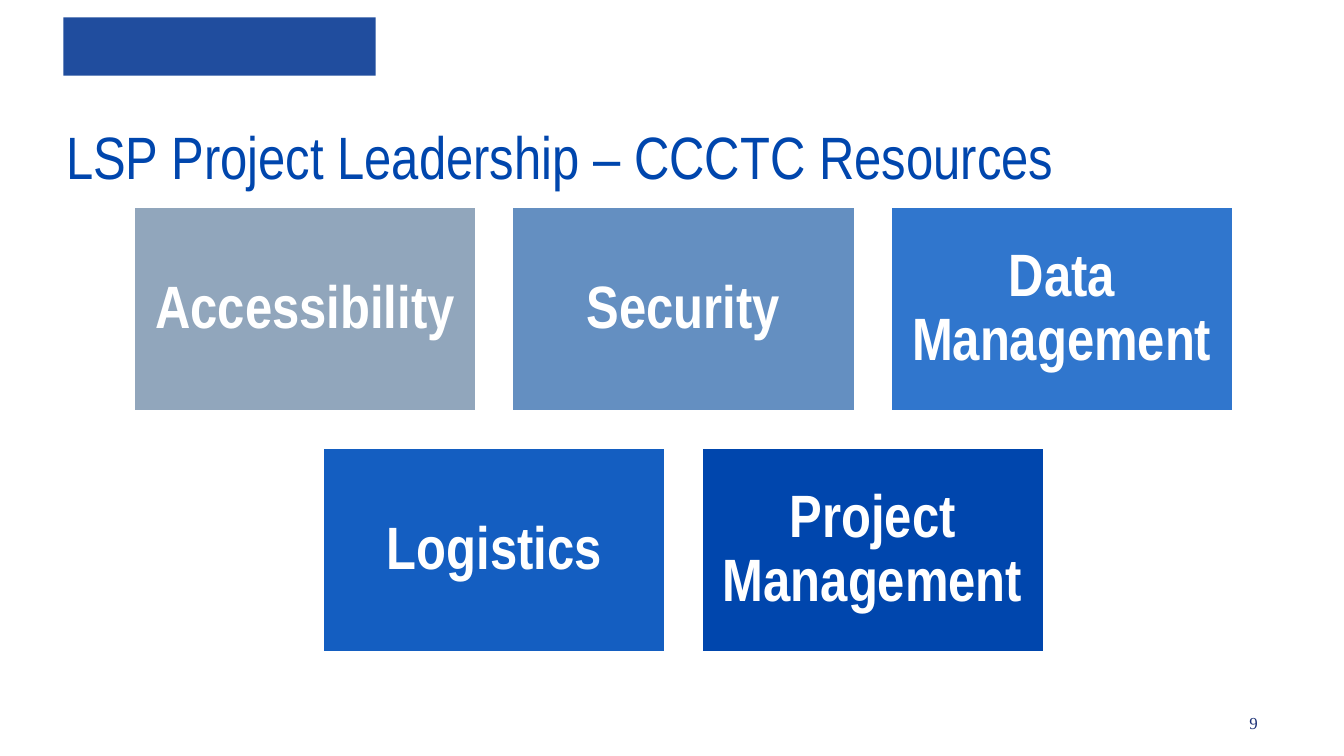
from pptx import Presentation
from pptx.dml.color import RGBColor
from pptx.enum.shapes import MSO_SHAPE as Shape
from pptx.enum.text import MSO_ANCHOR as Anchor, PP_ALIGN as Align
from pptx.util import Cm, Pt

WHITE = RGBColor(0xFF, 0xFF, 0xFF)
BANNER_BLUE = RGBColor(0x20, 0x4D, 0x9E)
TITLE_BLUE = RGBColor(0x00, 0x46, 0xAD)
NUMBER_BLUE = RGBColor(0x1B, 0x30, 0x75)
GREY_BLUE = RGBColor(0x91, 0xA6, 0xBC)
STEEL_BLUE = RGBColor(0x64, 0x8F, 0xC1)
BRIGHT_BLUE = RGBColor(0x30, 0x76, 0xCD)
DEEP_BLUE = RGBColor(0x14, 0x5E, 0xC1)

RESOURCE_ROWS = [
    [("Accessibility", GREY_BLUE), ("Security", STEEL_BLUE),
     ("Data Management", BRIGHT_BLUE)],
    [("Logistics", DEEP_BLUE), ("Project Management", TITLE_BLUE)],
]
GRID_CENTER, GRID_TOP = 12.92, 3.89
TILE_WIDTH, TILE_HEIGHT, TILE_GAP = 6.5, 3.9, 0.65


def write(frame, text, size, color, align=Align.LEFT, name="Arial Narrow", bold=False):
    frame.word_wrap = True
    paragraph = frame.paragraphs[0]
    paragraph.text = text
    paragraph.alignment = align
    font = paragraph.runs[0].font
    font.name, font.size, font.bold = name, Pt(size), bold
    font.color.rgb = color
    return paragraph


def add_label(slide, left, top, width, height, text, size, color, **style):
    label = slide.shapes.add_textbox(Cm(left), Cm(top), Cm(width), Cm(height))
    write(label.text_frame, text, size, color, **style)


def add_block(slide, left, top, width, height, color):
    block = slide.shapes.add_shape(
        Shape.RECTANGLE, Cm(left), Cm(top), Cm(width), Cm(height))
    block.shadow.inherit = False
    block.fill.solid()
    block.fill.fore_color.rgb = color
    block.line.fill.background()
    return block


def add_tile(slide, left, top, resource, color):
    tile = add_block(slide, left, top, TILE_WIDTH, TILE_HEIGHT, color)
    tile.line.color.rgb = WHITE
    tile.line.width = Pt(2)
    frame = tile.text_frame
    frame.vertical_anchor = Anchor.MIDDLE
    frame.margin_left = frame.margin_right = Cm(0.33)
    frame.margin_top = frame.margin_bottom = Cm(0.33)
    paragraph = write(frame, resource, 32, WHITE, align=Align.CENTER, bold=True)
    paragraph.line_spacing = 0.9


def add_resource_grid(slide):
    for row, resources in enumerate(RESOURCE_ROWS):
        row_width = len(resources) * (TILE_WIDTH + TILE_GAP) - TILE_GAP
        row_left = GRID_CENTER - row_width / 2
        top = GRID_TOP + row * (TILE_HEIGHT + TILE_GAP)
        for column, (resource, color) in enumerate(resources):
            left = row_left + column * (TILE_WIDTH + TILE_GAP)
            add_tile(slide, left, top, resource, color)


def main():
    deck = Presentation()
    deck.slide_width, deck.slide_height = Cm(25.4), Cm(14.28)
    slide = deck.slides.add_slide(deck.slide_layouts[6])
    add_label(slide, 20.24, 13.34, 3.78, 0.64, "9", 9, NUMBER_BLUE,
              align=Align.RIGHT, name="Times New Roman")
    add_block(slide, 1.2, 0.33, 5.9, 1.1, BANNER_BLUE)
    add_label(slide, 1, 2.13, 23.88, 5.13,
              "LSP Project Leadership – CCCTC Resources", 32, TITLE_BLUE)
    add_resource_grid(slide)
    deck.save("out.pptx")


if __name__ == "__main__":
    main()
